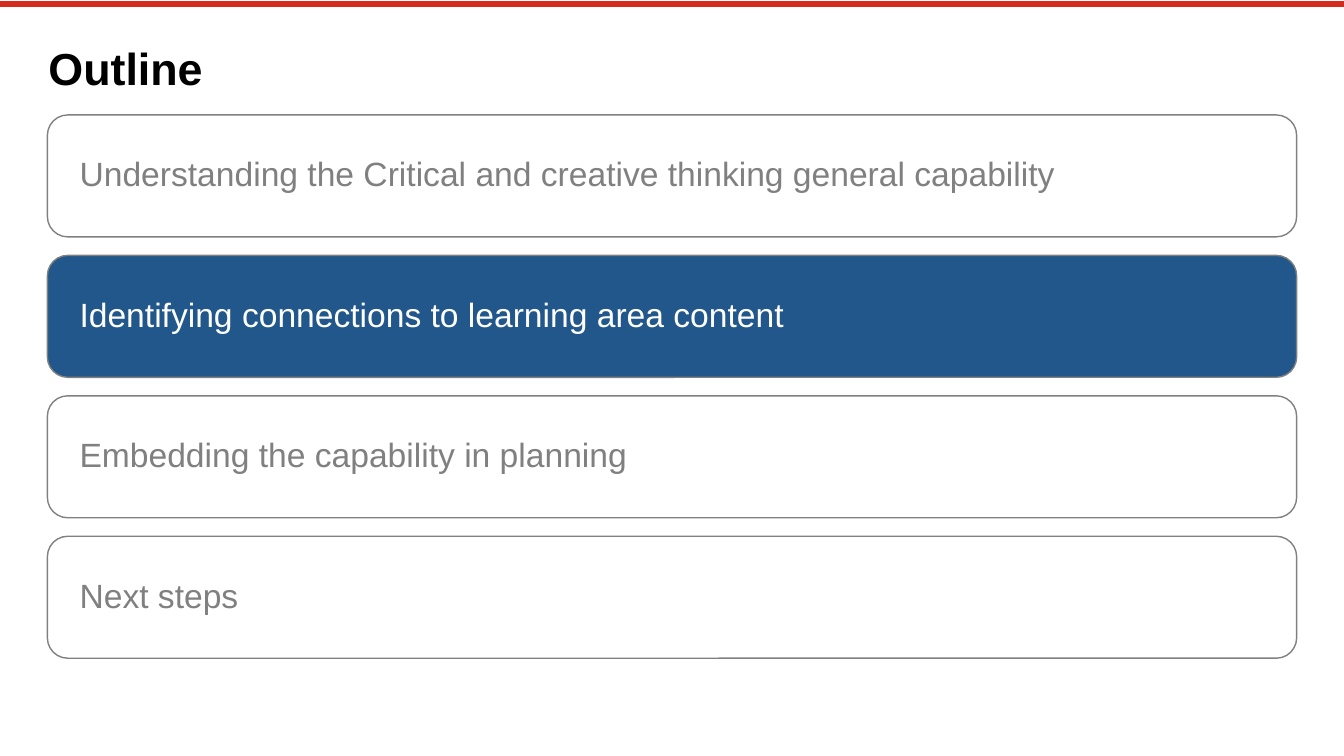
import dataclasses

import pptx
import pptx.dml.color
import pptx.enum.shapes
import pptx.enum.text
import pptx.oxml
import pptx.oxml.ns
import pptx.shapes.autoshape
import pptx.slide
import pptx.text.text
import pptx.util

SLIDE_WIDTH, SLIDE_HEIGHT = 13.33, 7.5
FONT = "Arial"
RED, BLUE, GREY, WHITE, BLACK = "D52B1E", "21578A", "808080", "FFFFFF", "000000"

# The outline is a grid of one column; its rows share the height evenly.
COLUMN_LEFT, COLUMN_WIDTH = 0.47, 12.39
ROWS_TOP, ROWS_BOTTOM, ROW_HEIGHT = 1.14, 6.53, 1.21
ROW_INDENT = 0.26


@dataclasses.dataclass(frozen=True)
class Topic:
    wording: str
    current: bool = False


TOPICS = [
    Topic("Understanding the Critical and creative thinking general capability"),
    Topic("Identifying connections to learning area content", current=True),
    Topic("Embedding the capability in planning"),
    Topic("Next steps"),
]
ROW_PITCH = (ROWS_BOTTOM - ROWS_TOP - ROW_HEIGHT) / (len(TOPICS) - 1)


def colour(hex_code: str) -> pptx.dml.color.RGBColor:
    return pptx.dml.color.RGBColor.from_string(hex_code)


def write(
    frame: pptx.text.text.TextFrame,
    wording: str,
    size: float,
    hex_code: str,
    indent: float = 0,
    bold: bool = False,
) -> pptx.text.text._Paragraph:
    """Put one left-aligned paragraph in a frame inset only on its left."""
    frame.word_wrap = True
    frame.margin_left = pptx.util.Inches(indent)
    frame.margin_top = frame.margin_right = frame.margin_bottom = 0
    para = frame.paragraphs[0]
    para.text = wording
    para.alignment = pptx.enum.text.PP_ALIGN.LEFT
    para.font.name = FONT
    para.font.size = pptx.util.Pt(size)
    para.font.bold = bold
    para.font.color.rgb = colour(hex_code)
    return para


def add_top_rule(page: pptx.slide.Slide) -> None:
    height = pptx.util.Inches(0.04)
    rule = page.shapes.add_connector(
        pptx.enum.shapes.MSO_CONNECTOR.STRAIGHT,
        0, height, pptx.util.Inches(SLIDE_WIDTH), height,
    )
    rule.line.color.rgb = colour(RED)
    rule.line.width = pptx.util.Pt(4.2)
    properties = rule._element.spPr
    properties.append(pptx.oxml.parse_xml(
        f"<a:effectLst {pptx.oxml.ns.nsdecls('a')}/>"
    ))


def add_title(page: pptx.slide.Slide, wording: str) -> None:
    box = page.shapes.add_textbox(
        *map(pptx.util.Inches, (COLUMN_LEFT + 0.01, 0.4, COLUMN_WIDTH, 0.52))
    )
    write(box.text_frame, wording, 32, BLACK, bold=True)


def add_topic(page: pptx.slide.Slide, row: int, topic: Topic) -> None:
    top = ROWS_TOP + row * ROW_PITCH
    box = page.shapes.add_shape(
        pptx.enum.shapes.MSO_SHAPE.ROUNDED_RECTANGLE,
        *map(pptx.util.Inches, (COLUMN_LEFT, top, COLUMN_WIDTH, ROW_HEIGHT)),
    )
    box.shadow.inherit = False
    box.fill.solid()
    box.fill.fore_color.rgb = colour(BLUE if topic.current else WHITE)
    box.line.color.rgb = colour(GREY)
    box.line.width = pptx.util.Pt(1)
    box.text_frame.vertical_anchor = pptx.enum.text.MSO_ANCHOR.MIDDLE
    text_colour = WHITE if topic.current else GREY
    para = write(box.text_frame, topic.wording, 24, text_colour, ROW_INDENT)
    para.line_spacing = 0.9


def main() -> None:
    deck = pptx.Presentation()
    deck.slide_width = pptx.util.Inches(SLIDE_WIDTH)
    deck.slide_height = pptx.util.Inches(SLIDE_HEIGHT)
    page = deck.slides.add_slide(deck.slide_layouts[6])
    add_top_rule(page)
    add_title(page, "Outline")
    for row, topic in enumerate(TOPICS):
        add_topic(page, row, topic)
    deck.save("out.pptx")


if __name__ == "__main__":
    main()
